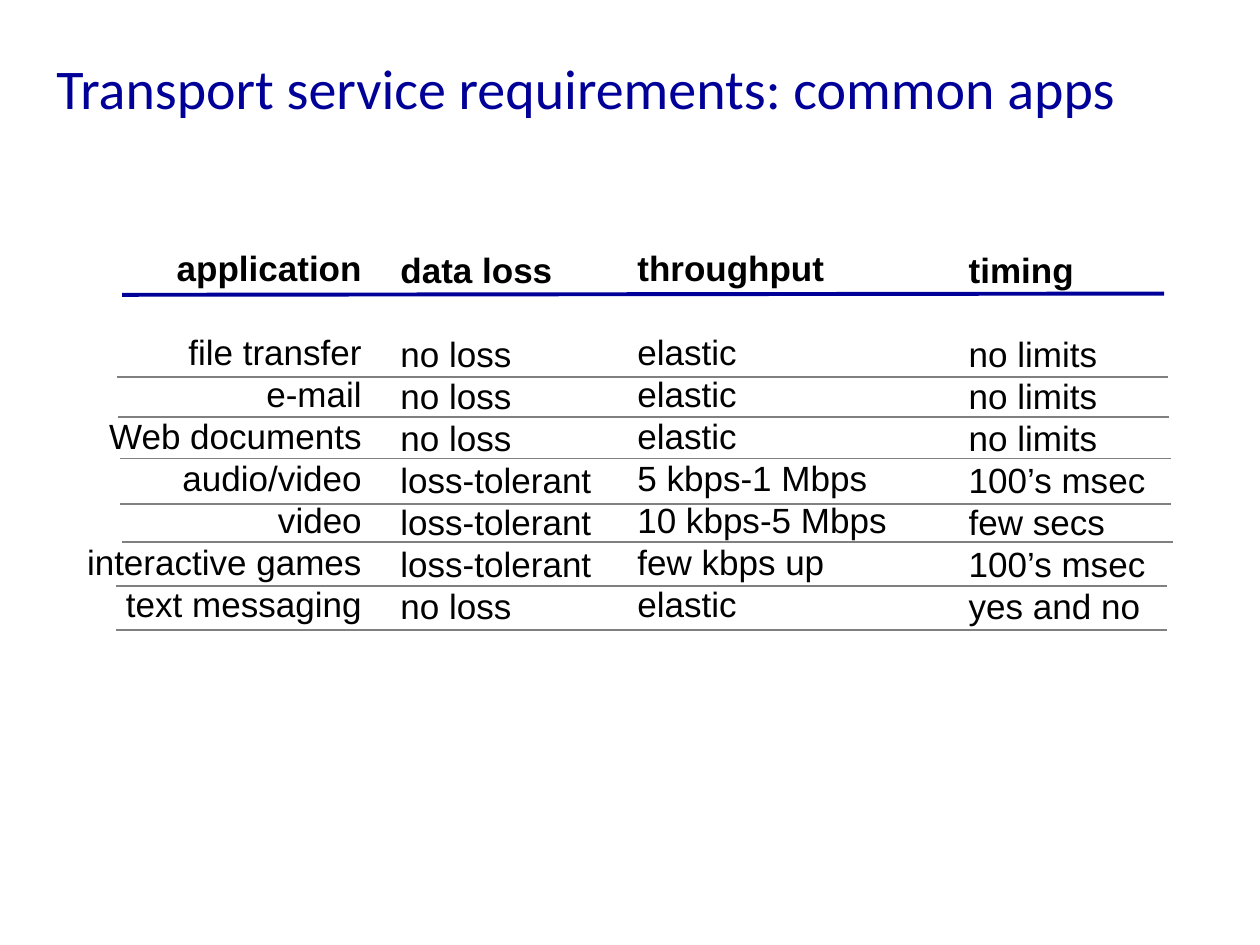
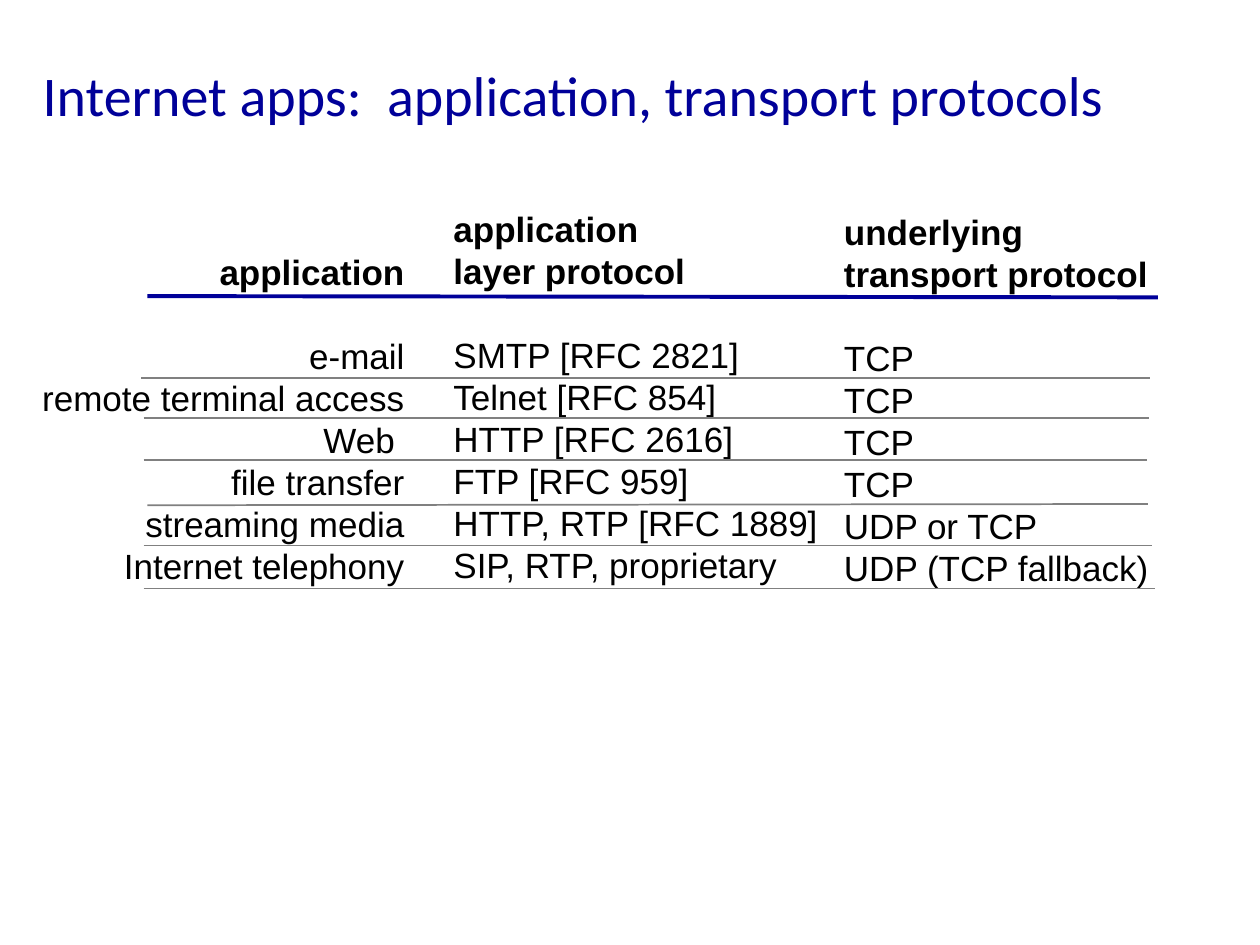
from dataclasses import dataclass

from lxml.etree import SubElement
from pptx import Presentation
from pptx.dml.color import RGBColor
from pptx.enum.shapes import MSO_CONNECTOR
from pptx.enum.text import MSO_ANCHOR, PP_ALIGN
from pptx.oxml.ns import qn
from pptx.util import Inches, Pt


# Theme shared by both slides
@dataclass(frozen=True)
class Theme:
    navy: RGBColor = RGBColor(0x00, 0x00, 0x99)
    grey: RGBColor = RGBColor(0x80, 0x80, 0x80)
    black: RGBColor = RGBColor(0x00, 0x00, 0x00)
    head: str = "Calibri"
    body: str = "Arial"
    big: int = 32
    mid: int = 20
    pitch: int = 24
    thick: float = 2.25
    thin: float = 1


def put(par, text, *, font, size, color, bold=False, align=PP_ALIGN.LEFT,
        pitch=None, before=0):
    """Fill one paragraph with formatted text."""
    par.alignment = align
    par.space_before = Pt(before)
    if pitch:
        par.line_spacing = Pt(pitch)
    run = par.add_run()
    run.text = text
    run.font.name, run.font.size, run.font.bold = font, Pt(size), bold
    run.font.color.rgb = color


class Deck:
    def __init__(self, theme):
        self.theme = theme
        self.prs = Presentation()
        self.prs.slide_width, self.prs.slide_height = Inches(10), Inches(7.5)
        self.slide = None

    def start(self):
        self.slide = self.prs.slides.add_slide(self.prs.slide_layouts[6])

    def box(self, left, top, width, height):
        shape = self.slide.shapes.add_textbox(
            Inches(left), Inches(top), Inches(width), Inches(height))
        shape.text_frame.word_wrap = True
        return shape.text_frame

    def title(self, text, *place):
        t = self.theme
        frame = self.box(*place)
        frame.vertical_anchor = MSO_ANCHOR.MIDDLE
        put(frame.paragraphs[0], text, font=t.head, size=t.big, color=t.navy)

    def column(self, left, top, width, heads, items, align=PP_ALIGN.LEFT):
        """Bold heading lines, a gap of one line, then the entries."""
        t = self.theme
        lines = heads + items
        frame = self.box(left, top, width,
                         round((len(lines) + 1) * t.pitch / 72 + 0.1, 2))
        for i, text in enumerate(lines):
            par = frame.add_paragraph() if i else frame.paragraphs[0]
            put(par, text, font=t.body, size=t.mid, color=t.black,
                bold=i < len(heads), align=align, pitch=t.pitch,
                before=t.pitch if i == len(heads) else 0)

    def line(self, x1, y1, x2, y2, color, width):
        rule = self.slide.shapes.add_connector(
            MSO_CONNECTOR.STRAIGHT,
            Inches(x1), Inches(y1), Inches(x2), Inches(y2))
        rule.line.color.rgb = color
        rule.line.width = Pt(width)
        SubElement(rule._element.spPr, qn("a:effectLst"))

    def rules(self, top, rows):
        """Thick rule below the headings, thin rules below the rows."""
        t = self.theme
        self.line(*top, t.navy, t.thick)
        for row in rows:
            self.line(*row, t.grey, t.thin)


def needs(deck):
    """Slide 1: what common apps require."""
    deck.start()
    deck.title("Transport service requirements: common apps",
               0.35, 0.25, 8.97, 0.89)
    deck.column(0.47, 1.91, 2.5, ["application"],
                ["file transfer", "e-mail", "Web documents", "audio/video",
                 "video", "interactive games", "text messaging"],
                PP_ALIGN.RIGHT)
    deck.column(3.08, 1.92, 1.8, ["data loss"],
                ["no loss"] * 3 + ["loss-tolerant"] * 3 + ["no loss"])
    deck.column(4.96, 1.91, 2.82, ["throughput"],
                ["elastic"] * 3 + ["5 kbps-1 Mbps", "10 kbps-5 Mbps",
                                   "few kbps up", "elastic"])
    deck.column(7.59, 1.92, 2.26, ["timing"],
                ["no limits"] * 3 + ["100’s msec", "few secs",
                                     "100’s msec", "yes and no"])
    span = 8.34
    starts = [(0.93, 2.99), (0.94, 3.31), (0.95, 3.64), (0.95, 4),
              (0.97, 4.3), (0.92, 4.65), (0.92, 5)]
    deck.rules((0.97, 2.34, 9.24, 2.33),
               [(x, y, x + span, y) for x, y in starts])


def stacks(deck):
    """Slide 2: protocols that the apps use."""
    deck.start()
    deck.title("Internet apps:  application, transport protocols",
               0.24, 0.29, 9.57, 0.92)
    deck.column(0.21, 1.94, 3.1, ["application"],
                ["e-mail", "remote terminal access", "Web ", "file transfer",
                 "streaming media", "Internet telephony"], PP_ALIGN.RIGHT)
    deck.column(3.5, 1.6, 3.12, ["application", "layer protocol"],
                ["SMTP [RFC 2821]", "Telnet [RFC 854]", "HTTP [RFC 2616]",
                 "FTP [RFC 959]", "HTTP, RTP [RFC 1889]",
                 "SIP, RTP, proprietary"])
    deck.column(6.6, 1.62, 2.87, ["underlying", "transport protocol"],
                ["TCP"] * 4 + ["UDP or TCP", "UDP (TCP fallback)"])
    deck.rules((1.17, 2.35, 9.19, 2.36),
               [(1.12, 3, 9.13, 3), (1.14, 3.32, 9.12, 3.32),
                (1.14, 3.65, 9.1, 3.65), (1.17, 4.01, 9.11, 4),
                (1.14, 4.33, 9.14, 4.33), (1.14, 4.67, 9.17, 4.67)])


def main():
    deck = Deck(Theme())
    needs(deck)
    stacks(deck)
    deck.prs.save("out.pptx")


if __name__ == "__main__":
    main()
